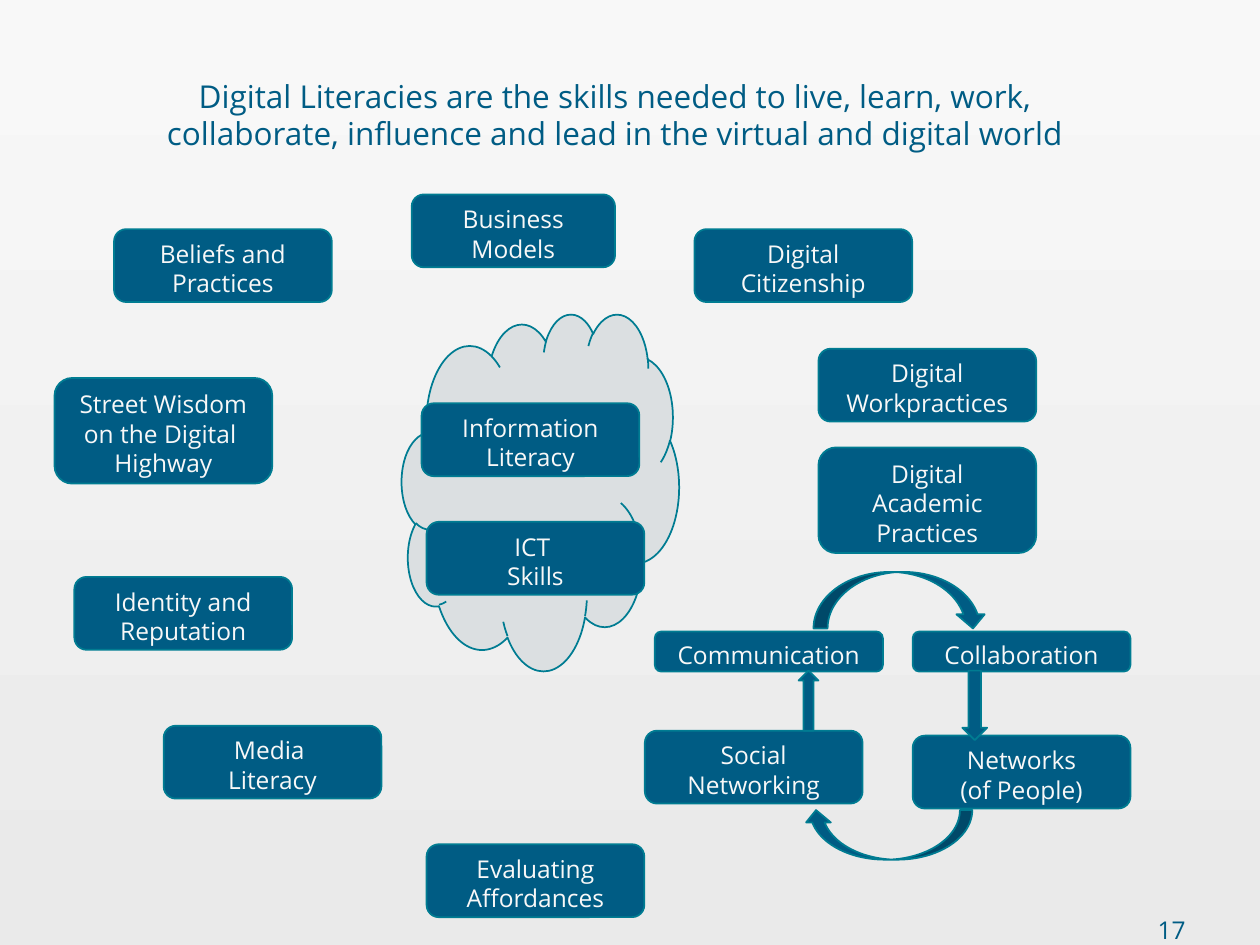
"""Build the digital literacies slide."""
import pptx
import pptx.util
import pptx.dml.color
import pptx.enum.shapes
import pptx.enum.text

Cm = pptx.util.Cm
Kind = pptx.enum.shapes.MSO_SHAPE
Align = pptx.enum.text.PP_ALIGN
Anchor = pptx.enum.text.MSO_ANCHOR
Fit = pptx.enum.text.MSO_AUTO_SIZE

HUES = {"top": "F8F8F8", "base": "EAEAEA", "blue": "005C84",
        "edge": "007C92", "cloud": "DBDFE1"}
WIDE, ONE, TWO, THREE = 4.39, 0.81, 1.47, 2.13


class Page:
    """Hold the style and the current slide."""

    def __init__(self, slide, font="Open Sans"):
        self.slide = slide
        self.font = font

    def hue(self, name):
        return pptx.dml.color.RGBColor.from_string(HUES[name])

    def back(self, first, last):
        fill = self.slide.background.fill
        fill.gradient()
        fill.gradient_angle = 270
        for stop, name in zip(fill.gradient_stops, (first, last)):
            stop.color.rgb = self.hue(name)

    def words(self, frame, text, size, hue, align):
        frame.word_wrap = True
        frame.text = text
        for para in frame.paragraphs:
            para.alignment = align
            for run in para.runs:
                run.font.name = self.font
                run.font.size = pptx.util.Pt(size)
                run.font.color.rgb = self.hue(hue)

    def shape(self, kind, left, top, width, height, fill="blue", turn=0):
        item = self.slide.shapes.add_shape(
            kind, Cm(left), Cm(top), Cm(width), Cm(height))
        item.shadow.inherit = False
        item.fill.solid()
        item.fill.fore_color.rgb = self.hue(fill)
        item.line.color.rgb = self.hue("edge")
        item.line.width = pptx.util.Pt(1)
        item.rotation = turn
        return item

    def box(self, text, left, top, width=WIDE, height=TWO):
        item = self.shape(Kind.ROUNDED_RECTANGLE, left, top, width, height)
        frame = item.text_frame
        frame.margin_bottom = 0
        frame.vertical_anchor = Anchor.TOP
        frame.auto_size = Fit.SHAPE_TO_FIT_TEXT
        self.words(frame, text, 14, "top", Align.CENTER)

    def label(self, text, left, top, width, height, size, align):
        item = self.slide.shapes.add_textbox(
            Cm(left), Cm(top), Cm(width), Cm(height))
        self.words(item.text_frame, text, size, "blue", align)
        return item.text_frame


def main():
    deck = pptx.Presentation()
    deck.slide_width, deck.slide_height = Cm(25.4), Cm(19.05)
    page = Page(deck.slides.add_slide(deck.slide_layouts[6]))
    page.back("top", "base")

    page.shape(Kind.CLOUD, 8.1, 6.32, 5.59, 7.19, "cloud")
    frame = page.label("17", 18.59, 18.52, 5.31, 0.51, 14, Align.RIGHT)
    frame.margin_left = frame.margin_right = 0
    frame.margin_top = frame.margin_bottom = 0
    frame.vertical_anchor = Anchor.BOTTOM

    for spec in (
        ("Information\nLiteracy", 8.5, 8.13),
        ("Networks\n(of People)", 18.4, 14.83),
        ("Collaboration", 18.4, 12.73, WIDE, ONE),
        ("Social\nNetworking", 13, 14.73),
        ("Communication", 13.2, 12.73, 4.6, ONE),
        ("Digital Academic Practices", 16.5, 9.02, WIDE, THREE),
        ("Digital\nWorkpractices", 16.5, 7.03),
        ("Beliefs and\nPractices", 2.3, 4.62),
        ("Business\nModels", 8.3, 3.92, 4.1),
        ("Digital\nCitizenship", 14, 4.62),
        ("ICT \nSkills", 8.6, 10.52),
        ("Media \nLiteracy", 3.3, 14.63),
        ("Identity and Reputation", 1.5, 11.63),
        ("Street Wisdom on the Digital \nHighway", 1.1, 7.62, WIDE, THREE),
        ("Evaluating\nAffordances", 8.6, 17.02),
    ):
        page.box(*spec)

    page.shape(Kind.CURVED_DOWN_ARROW, 16.4, 11.53, 3.5, 1.14)
    page.shape(Kind.CURVED_DOWN_ARROW, 16.2, 16.33, 3.4, 1, turn=180)
    page.shape(Kind.UP_ARROW, 16.1, 13.52, 0.4, 1.21)
    page.shape(Kind.DOWN_ARROW, 19.4, 13.52, 0.5, 1.4)

    frame = page.label(
        "Digital Literacies are the skills needed to live, learn, work, "
        "collaborate, influence and lead in the virtual and digital world",
        2.2, 1.42, 20.4, 1.8, 18, Align.CENTER)
    frame.auto_size = Fit.SHAPE_TO_FIT_TEXT
    deck.save("out.pptx")


if __name__ == "__main__":
    main()
